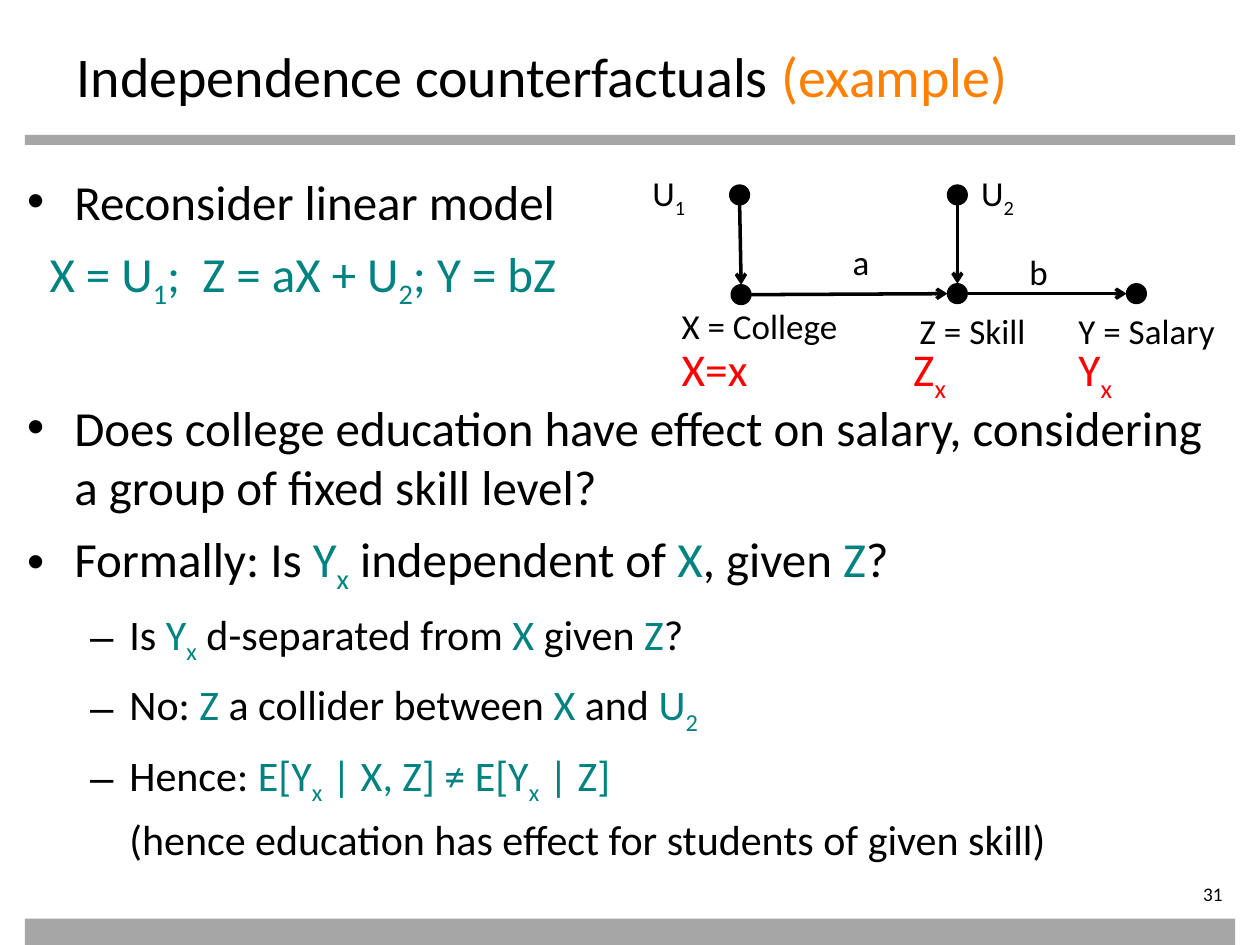
import itertools

import pptx
import pptx.dml.color
import pptx.enum.shapes
import pptx.enum.text
import pptx.oxml.ns
import pptx.util
from lxml import etree
from pptx.dml.color import RGBColor
from pptx.util import Cm, Pt

BLACK = RGBColor(0x00, 0x00, 0x00)
GREY = RGBColor(0xA6, 0xA6, 0xA6)
TEAL = RGBColor(0x00, 0x83, 0x80)
ORANGE = RGBColor(0xFF, 0x80, 0x00)
RED = RGBColor(0xFF, 0x00, 0x00)
SHAPE = pptx.enum.shapes.MSO_SHAPE
ALIGN = pptx.enum.text.PP_ALIGN
qn = pptx.oxml.ns.qn


def split_markup(text):
    """Yield (text, accented, subscript): {..} is accented, _c is a subscript."""
    characters, accented, subscript = [], False, False
    for character in text:
        if character in "{}":
            accented = character == "{"
        elif character == "_":
            subscript = True
        else:
            characters.append((character, accented, subscript))
            subscript = False
    for style, group in itertools.groupby(characters, key=lambda item: item[1:]):
        yield "".join(item[0] for item in group), *style


class SlideBuilder:
    font = "Calibri"
    radius = 0.2  # of a graph node, in cm

    def __init__(self, slide):
        self.slide = slide

    def shape(self, kind, left, top, width, height, color, outline=None):
        shape = self.slide.shapes.add_shape(
            kind, Cm(left), Cm(top), Cm(width), Cm(height))
        shape.shadow.inherit = False
        shape.fill.solid()
        shape.fill.fore_color.rgb = color
        if outline:
            shape.line.color.rgb = color
            shape.line.width = Pt(outline)
        else:
            shape.line.fill.background()

    def node(self, x, y):
        size = 2 * self.radius
        self.shape(SHAPE.OVAL, x - self.radius, y - self.radius, size, size, BLACK, 0.75)

    def arrow(self, start, end):
        """Join the facing edges of two nodes, rightwards or downwards."""
        across = end[0] - start[0] > end[1] - start[1]
        dx, dy = (self.radius, 0) if across else (0, self.radius)
        connector = self.slide.shapes.add_connector(
            pptx.enum.shapes.MSO_CONNECTOR.STRAIGHT,
            Cm(start[0] + dx), Cm(start[1] + dy), Cm(end[0] - dx), Cm(end[1] - dy))
        connector.line.color.rgb = BLACK
        connector.line.width = Pt(2)
        line = connector.line._get_or_add_ln()
        etree.SubElement(line, qn("a:tailEnd"), type="arrow")
        etree.SubElement(connector._element.spPr, qn("a:effectLst"))

    def text_frame(self, left, top, width, height):
        box = self.slide.shapes.add_textbox(Cm(left), Cm(top), Cm(width), Cm(height))
        box.text_frame.word_wrap = True
        return box.text_frame

    def paragraph(self, paragraph, text, size, color=BLACK, accent=TEAL,
                  margin=0, hanging=0, bullet=None, before=0):
        properties = paragraph._p.get_or_add_pPr()
        properties.set("marL", str(Cm(margin)))
        properties.set("indent", str(-Cm(hanging)))
        if bullet:
            etree.SubElement(properties, qn("a:buFont"), typeface="Arial")
            etree.SubElement(properties, qn("a:buChar"), char=bullet)
        paragraph.space_before = Pt(before)
        paragraph.font.name = self.font
        paragraph.font.size = Pt(size)
        paragraph.font.color.rgb = color
        for part, accented, subscript in split_markup(text):
            run = paragraph.add_run()
            run.text = part
            if accented:
                run.font.color.rgb = accent
            if subscript:
                run._r.get_or_add_rPr().set("baseline", "-25000")

    def label(self, text, left, top, width, height, size, **style):
        frame = self.text_frame(left, top, width, height)
        self.paragraph(frame.paragraphs[0], text, size, **style)
        return frame

    def body(self, left, top, width, height, items):
        frame = self.text_frame(left, top, width, height)
        for index, (text, style) in enumerate(items):
            paragraph = frame.add_paragraph() if index else frame.paragraphs[0]
            self.paragraph(paragraph, text, **style)


def main():
    presentation = pptx.Presentation()
    presentation.slide_width, presentation.slide_height = Cm(25.4), Cm(19.05)
    builder = SlideBuilder(presentation.slides.add_slide(presentation.slide_layouts[6]))

    # Bars and title
    builder.shape(SHAPE.RECTANGLE, 0.5, 2.72, 24.4, 0.2, GREY)
    builder.shape(SHAPE.RECTANGLE, 0.5, 18.52, 24.4, 0.53, GREY)
    builder.label("Independence counterfactuals {(example)}",
                  1.3, 0.71, 22.86, 1.4, 32, accent=ORANGE)

    # Body text
    first = dict(size=28, margin=0.95, hanging=0.95, bullet="•")
    spaced = dict(first, before=7.7)
    second = dict(size=24, margin=2.06, hanging=0.79, bullet="–", before=7.5)
    builder.body(0.3, 3.33, 24.8, 14.45, [
        ("Reconsider linear model", first),
        ("X = U_1;  Z = aX + U_2; Y = bZ",
         dict(size=28, color=TEAL, margin=0.45, before=7.7)),
        ("Does college education have effect on salary, considering "
         "a group of fixed skill level?", dict(first, before=49.5)),
        ("Formally: Is {Y_x} independent of {X}, given {Z}?", spaced),
        ("Is {Y_x} d-separated from {X} given {Z}?", second),
        ("No: {Z} a collider between {X} and {U_2}", second),
        ("Hence: {E[Y_x | X, Z] ≠ E[Y_x | Z]}", second),
        ("(hence education has effect for students of given skill)",
         dict(size=24, margin=2.06, before=4)),
    ])

    # Slide number
    frame = builder.label("31", 22.1, 17.78, 2.8, 0.56, 11)
    frame.paragraphs[0].alignment = ALIGN.RIGHT
    frame.margin_left = frame.margin_top = frame.margin_bottom = 0

    # Causal graph
    nodes = {"U1": (14.91, 3.93), "U2": (19.3, 3.93),
             "X": (14.94, 5.94), "Z": (19.3, 5.92), "Y": (22.91, 5.92)}
    for center in nodes.values():
        builder.node(*center)
    for start, end in (("U1", "X"), ("U2", "Z"), ("X", "Z"), ("Z", "Y")):
        builder.arrow(nodes[start], nodes[end])

    # Graph labels
    for text, left, top, width in (
            ("U_1", 12.9, 3.33, 1.57), ("U_2", 19.53, 3.33, 1.57),
            ("a", 16.94, 4.72, 0.9), ("b", 20.5, 4.93, 0.95),
            ("X = College", 13.49, 6.02, 4.39), ("Z = Skill", 18.29, 6.12, 3.99),
            ("Y = Salary", 21.49, 6.12, 3.81)):
        builder.label(text, left, top, width, 1.11, 20)

    # Counterfactual values
    for text, left, width in (("X=x", 13.49, 2.05), ("Z_x", 18.16, 1.35),
                              ("Y_x", 21.49, 1.35)):
        builder.label(text, left, 6.76, width, 1.37, 26, color=RED)

    presentation.save("out.pptx")


if __name__ == "__main__":
    main()
